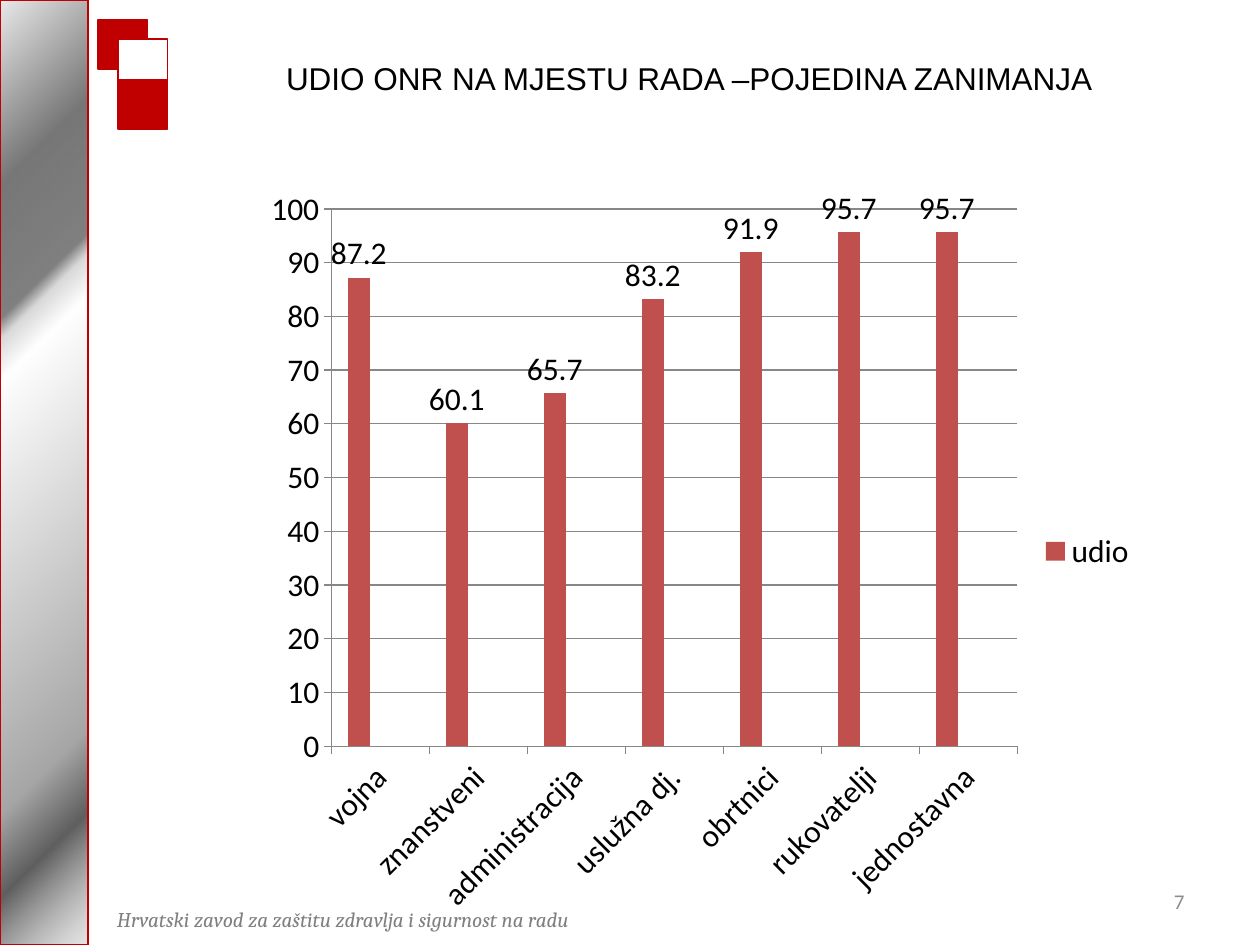
from pptx import Presentation
from pptx.chart.data import CategoryChartData
from pptx.dml.color import RGBColor
from pptx.enum.chart import XL_CHART_TYPE, XL_LABEL_POSITION, XL_LEGEND_POSITION, XL_TICK_MARK
from pptx.enum.shapes import MSO_SHAPE
from pptx.enum.text import MSO_ANCHOR, MSO_AUTO_SIZE, PP_ALIGN
from pptx.oxml import parse_xml
from pptx.oxml.ns import nsdecls
from pptx.util import Inches, Pt

WIDE, HIGH = Inches(10), Inches(7.5)
RED = RGBColor(0xC0, 0x00, 0x00)
BRICK = RGBColor(0xC0, 0x50, 0x4D)
GREEN = RGBColor(0x9B, 0xBB, 0x59)
WHITE = RGBColor(0xFF, 0xFF, 0xFF)
BLACK = RGBColor(0x00, 0x00, 0x00)
GREY = RGBColor(0x80, 0x80, 0x80)
PALE = RGBColor(0x8C, 0x8C, 0x8C)
RULE = RGBColor(0x87, 0x87, 0x87)

STOPS = [(0, "CBCBCB"), (13, "5F5F5F"), (21, "A6A6A6"), (63, "FFFFFF"),
         (67, "D9D9D9"), (69, "808080"), (82, "777777"), (100, "EAEAEA")]
SHARES = {"vojna": 87.2, "znanstveni": 60.1, "administracija": 65.7,
          "uslužna dj.": 83.2, "obrtnici": 91.9, "rukovatelji": 95.7,
          "jednostavna": 95.7}


def area(x, y, w, h):
    return int(x * WIDE), int(y * HIGH), int(w * WIDE), int(h * HIGH)


def apply(item, form):
    for key, val in form.items():
        setattr(item, key, val)


def style(font, name, size, color, italic=False):
    apply(font, {"name": name, "size": Pt(size), "italic": italic, "bold": False})
    font.color.rgb = color


def block(slide, box, color):
    shape = slide.shapes.add_shape(MSO_SHAPE.RECTANGLE, *box)
    shape.shadow.inherit = False
    shape.fill.solid()
    shape.fill.fore_color.rgb = color
    shape.line.color.rgb = RED
    shape.line.width = Pt(1)
    return shape


def add_band(slide, box):
    band = block(slide, box, WHITE)
    stops = "".join(
        f'<a:gs pos="{pos * 1000}"><a:srgbClr val="{tone}">'
        + ('<a:alpha val="46000"/>' if pos == 0 else "")
        + "</a:srgbClr></a:gs>"
        for pos, tone in STOPS)
    grad = parse_xml(
        f'<a:gradFill {nsdecls("a")} rotWithShape="1"><a:gsLst>{stops}</a:gsLst>'
        '<a:path path="circle"><a:fillToRect l="100000" t="100000"/></a:path>'
        '</a:gradFill>')
    props = band.element.spPr
    props.replace(props.find("{*}solidFill"), grad)


def add_blocks(slide, box):
    left, top, wide, high = box
    side = int(wide * 0.71)
    for x, y, color in [(0, 0, RED), (0.29, 0.18, WHITE), (0.29, 0.55, RED)]:
        spot = left + int(x * wide), top + int(y * high), side, side
        block(slide, spot, color)


def fill_text(shape, text, form, look, align=PP_ALIGN.LEFT):
    frame = shape.text_frame
    apply(frame, form)
    part = frame.paragraphs[0]
    part.alignment = align
    run = part.add_run()
    run.text = text
    style(run.font, *look)


def add_title(slide, box):
    title = slide.shapes.title
    apply(title, dict(zip(("left", "top", "width", "height"), box)))
    form = {"word_wrap": False, "vertical_anchor": MSO_ANCHOR.TOP,
            "auto_size": MSO_AUTO_SIZE.SHAPE_TO_FIT_TEXT}
    fill_text(title, "UDIO ONR NA MJESTU RADA –POJEDINA ZANIMANJA", form,
              ("Arial", 18, BLACK))


def add_foot(slide, box):
    left, top, wide, high = box
    name = slide.shapes.add_textbox(left, top + int(high * 0.39),
                                    int(wide * 0.51), int(high * 0.61))
    form = {"word_wrap": False, "auto_size": MSO_AUTO_SIZE.SHAPE_TO_FIT_TEXT}
    fill_text(name, "Hrvatski zavod za zaštitu zdravlja i sigurnost na radu",
              form, ("Cambria", 12, GREY, True))
    page = slide.shapes.add_textbox(left + int(wide * 0.73), top,
                                    int(wide * 0.27), int(high * 0.82))
    form = {"word_wrap": True, "vertical_anchor": MSO_ANCHOR.MIDDLE}
    fill_text(page, "7", form, ("Calibri", 12, PALE), PP_ALIGN.RIGHT)


def add_graph(slide, box):
    data = CategoryChartData()
    data.categories = list(SHARES)
    data.add_series("udio ", list(SHARES.values()))
    for name in ("Series 2", "Series 3"):
        data.add_series(name, [None] * len(SHARES))
    kind = XL_CHART_TYPE.COLUMN_CLUSTERED
    chart = slide.shapes.add_chart(kind, *box, data).chart
    style(chart.font, "Calibri", 18, BLACK)
    apply(chart, {"has_title": False, "has_legend": True})
    key = chart.legend
    apply(key, {"position": XL_LEGEND_POSITION.RIGHT, "include_in_layout": False})
    for idx in (2, 1):
        key._element.find("{*}legendPos").addnext(parse_xml(
            f'<c:legendEntry {nsdecls("c")}><c:idx val="{idx}"/>'
            '<c:delete val="1"/></c:legendEntry>'))
    plot = chart.plots[0]
    apply(plot, {"gap_width": 150, "overlap": 0, "vary_by_categories": False})
    for row, color in zip(plot.series, (BRICK, BRICK, GREEN)):
        row.format.fill.solid()
        row.format.fill.fore_color.rgb = color
    tags = plot.series[0].data_labels
    apply(tags, {"show_value": True, "position": XL_LABEL_POSITION.OUTSIDE_END})
    axis = chart.value_axis
    apply(axis, {"minimum_scale": 0, "maximum_scale": 100, "major_unit": 10,
                 "has_major_gridlines": True})
    for side in (axis, chart.category_axis):
        apply(side, {"major_tick_mark": XL_TICK_MARK.OUTSIDE,
                     "minor_tick_mark": XL_TICK_MARK.NONE})
        side.format.line.color.rgb = RULE
    axis.major_gridlines.format.line.color.rgb = RULE


def main():
    deck = Presentation()
    apply(deck, {"slide_width": WIDE, "slide_height": HIGH})
    slide = deck.slides.add_slide(deck.slide_layouts[5])
    add_band(slide, area(0, 0, 0.07, 1))
    add_blocks(slide, area(0.078, 0.021, 0.055, 0.115))
    add_foot(slide, area(0.083, 0.927, 0.867, 0.065))
    add_graph(slide, area(0.201, 0.185, 0.717, 0.797))
    add_title(slide, area(0.217, 0.056, 0.667, 0.053))
    deck.save("out.pptx")


if __name__ == "__main__":
    main()
